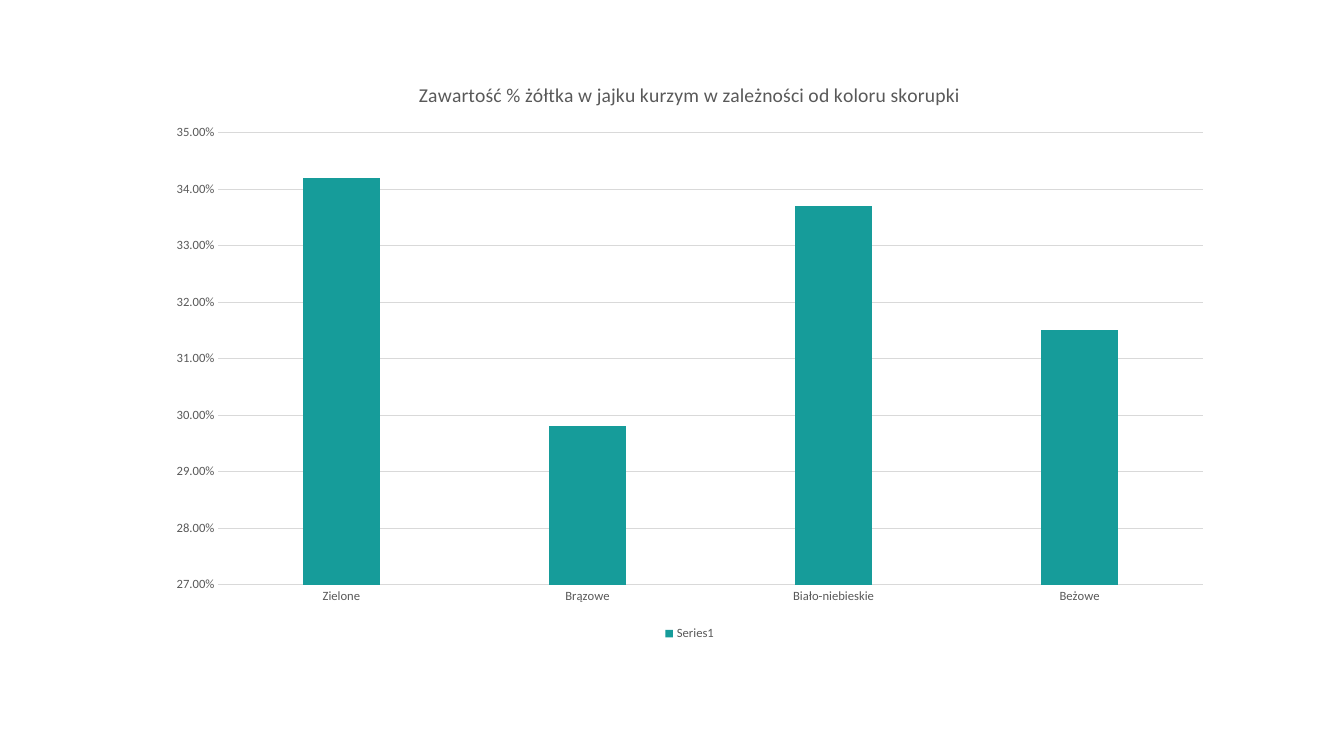
import dataclasses

import pptx
import pptx.chart.data
import pptx.dml.color
import pptx.enum.chart
import pptx.util

Inches = pptx.util.Inches
RGB = pptx.dml.color.RGBColor
Kind = pptx.enum.chart


@dataclasses.dataclass(frozen=True)
class Theme:
    font: str = "Calibri"
    text: str = "595959"
    line: str = "D9D9D9"
    bar: str = "169C9A"
    base: float = 10
    label: float = 9
    title: float = 14
    rule: float = 0.75


@dataclasses.dataclass(frozen=True)
class Egg:
    shell: str
    yolk: float


THEME = Theme()
TITLE = "Zawartość % żółtka w jajku kurzym w zależności od koloru skorupki"
EGGS = [
    Egg("Zielone", 0.342),
    Egg("Brązowe", 0.298),
    Egg("Biało-niebieskie", 0.337),
    Egg("Beżowe", 0.315),
]


def set_font(font, size: float) -> None:
    font.name = THEME.font
    font.size = pptx.util.Pt(size)
    font.bold = False
    font.color.rgb = RGB.from_string(THEME.text)


def set_line(line) -> None:
    line.color.rgb = RGB.from_string(THEME.line)
    line.width = pptx.util.Pt(THEME.rule)


def set_title(chart) -> None:
    chart.has_title = True
    frame = chart.chart_title.text_frame
    frame.text = TITLE
    set_font(frame.paragraphs[0].font, THEME.title)
    chart.chart_title.include_in_layout = False


def set_axes(chart) -> None:
    for axis in (chart.category_axis, chart.value_axis):
        axis.major_tick_mark = Kind.XL_TICK_MARK.NONE
        axis.minor_tick_mark = Kind.XL_TICK_MARK.NONE
        set_font(axis.tick_labels.font, THEME.label)
    set_line(chart.category_axis.format.line)

    scale = chart.value_axis
    scale.minimum_scale, scale.maximum_scale = 0.27, 0.35
    scale.major_unit = 0.01
    scale.tick_labels.number_format = "0.00%"
    scale.tick_labels.number_format_is_linked = False
    scale.format.line.fill.background()
    scale.has_major_gridlines = True
    set_line(scale.major_gridlines.format.line)


def set_bars(chart) -> None:
    plot = chart.plots[0]
    plot.gap_width = 219
    plot.overlap = -27
    plot.vary_by_categories = False
    fill = plot.series[0].format.fill
    fill.solid()
    fill.fore_color.rgb = RGB.from_string(THEME.bar)


def set_legend(chart) -> None:
    chart.has_legend = True
    chart.legend.position = Kind.XL_LEGEND_POSITION.BOTTOM
    chart.legend.include_in_layout = False
    set_font(chart.legend.font, THEME.label)


def add_chart(slide) -> None:
    data = pptx.chart.data.CategoryChartData(number_format="0.00%")
    data.categories = [egg.shell for egg in EGGS]
    data.add_series("Series1", [egg.yolk for egg in EGGS])
    chart = slide.shapes.add_chart(
        Kind.XL_CHART_TYPE.COLUMN_CLUSTERED,
        Inches(1.54), Inches(0.6), Inches(10.6), Inches(5.8), data,
    ).chart
    set_font(chart.font, THEME.base)
    set_title(chart)
    set_axes(chart)
    set_bars(chart)
    set_legend(chart)


def main() -> None:
    deck = pptx.Presentation()
    deck.slide_width, deck.slide_height = Inches(13.33), Inches(7.5)
    blank = deck.slide_layouts.get_by_name("Blank")
    add_chart(deck.slides.add_slide(blank))
    deck.save("out.pptx")


if __name__ == "__main__":
    main()
